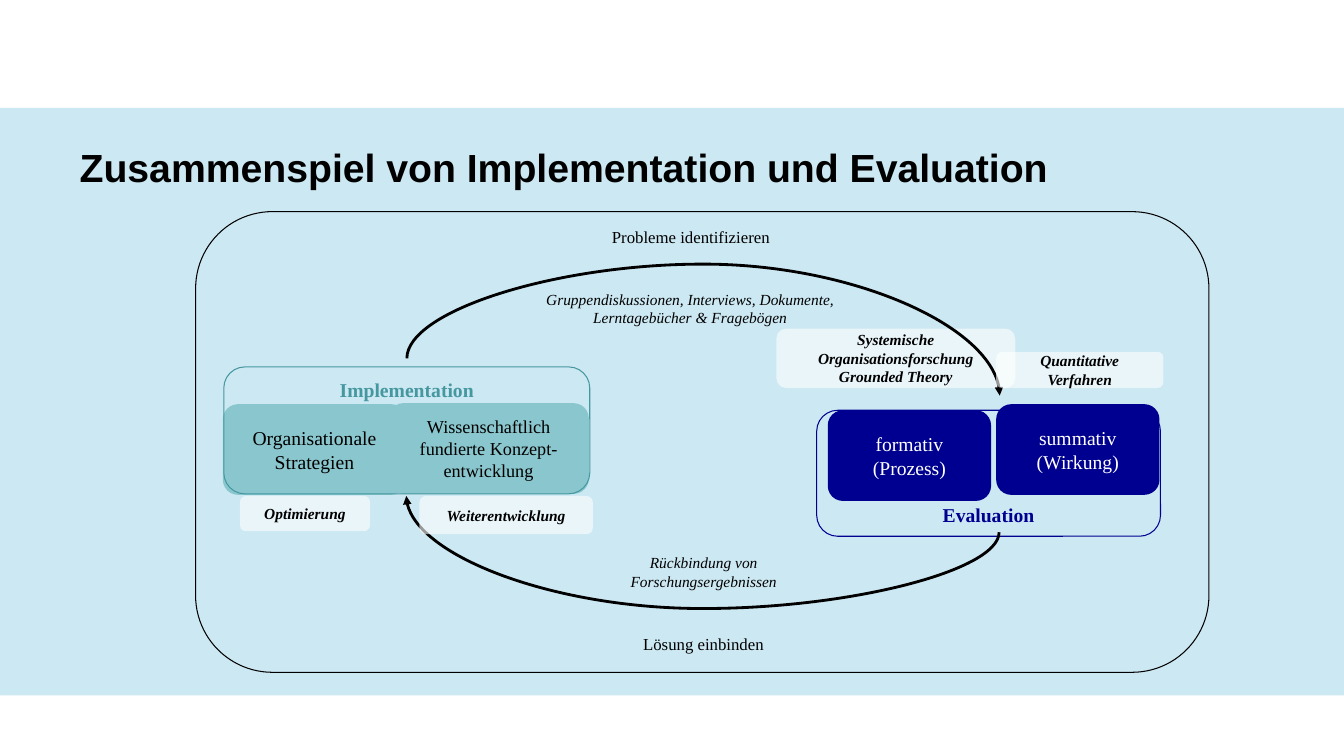
from pptx import Presentation
from pptx.dml.color import RGBColor
from pptx.enum.shapes import MSO_CONNECTOR, MSO_SHAPE
from pptx.enum.text import MSO_ANCHOR, PP_ALIGN
from pptx.oxml.ns import qn
from pptx.util import Pt
from lxml import etree

PX = 9144  # 100 px to the inch
RECT, ROUND = MSO_SHAPE.RECTANGLE, MSO_SHAPE.ROUNDED_RECTANGLE
CURVE = MSO_CONNECTOR.CURVE
TOP, MIDDLE, BOTTOM = MSO_ANCHOR.TOP, MSO_ANCHOR.MIDDLE, MSO_ANCHOR.BOTTOM
LEFT, CENTER = PP_ALIGN.LEFT, PP_ALIGN.CENTER
COLORS = {"black": "000000", "white": "FFFFFF", "band": "008FBE",
          "teal": "8AC6CD", "dark": "4597A0", "navy": "000090"}

deck = Presentation()
deck.slide_width, deck.slide_height = 1333 * PX, 750 * PX
slide = deck.slides.add_slide(deck.slide_layouts[6])
shapes = slide.shapes


def write(shape, text, size=11, color="black", font="Times New Roman", bold=False,
          italic=False, align=CENTER, anchor=MIDDLE, spacing=None, wrap=True):
    frame = shape.text_frame
    frame.word_wrap = wrap
    frame.vertical_anchor = anchor
    frame.text = text
    for para in frame.paragraphs:
        para.alignment = align
        para.line_spacing = spacing
        para.font.size = Pt(size)
        para.font.name = font
        para.font.bold = bold
        para.font.italic = italic
        para.font.color.rgb = RGBColor.from_string(COLORS[color])


def box(area, kind=ROUND, fill=None, line=None, alpha=None):
    """Add a shape; alpha is the opacity of its fill in percent."""
    shape = shapes.add_shape(kind, *[n * PX for n in area])
    shape.shadow.inherit = False
    if fill:
        shape.fill.solid()
        shape.fill.fore_color.rgb = RGBColor.from_string(COLORS[fill])
    else:
        shape.fill.background()
    if alpha:
        tint = shape._element.spPr.find(".//" + qn("a:srgbClr"))
        etree.SubElement(tint, qn("a:alpha"), val=str(alpha * 1000))
    if line:
        shape.line.color.rgb = RGBColor.from_string(COLORS[line])
        shape.line.width = Pt(0.75)
    else:
        shape.line.fill.background()
    return shape


box((0, 107, 1333, 583), RECT, fill="band", alpha=20)
title = shapes.add_textbox(79 * PX, 138 * PX, 1197 * PX, 79 * PX)
frame = title.text_frame
frame.margin_left = frame.margin_right = frame.margin_top = frame.margin_bottom = 0
write(title, "Zusammenspiel von Implementation und Evaluation", size=28,
      font="Arial", bold=True, align=LEFT, anchor=TOP, spacing=1.1)

# Evaluation side and the strategy boxes
pale = {"fill": "white", "alpha": 60}
label = {"bold": True, "italic": True}
write(box((770, 326, 237, 59), **pale),
      "Systemische Organisationsforschung\nGrounded Theory", **label)
write(box((810, 407, 341, 125), line="navy"), "Evaluation", size=14,
      color="navy", bold=True, anchor=BOTTOM, spacing=0.5)
steps = [
    ((385, 400, 199, 90), "teal", "Wissenschaftlich fundierte Konzept-entwicklung", 13, "black"),
    ((221, 401, 182, 90), "teal", "Organisationale Strategien", 14, "black"),
    ((821, 407, 162, 90), "navy", "formativ\n(Prozess)", 14, "white"),
    ((988, 401, 162, 90), "navy", "summativ\n(Wirkung)", 14, "white"),
]
for area, fill, text, size, color in steps:
    write(box(area, fill=fill), text, size=size, color=color)

# Outer frame and the two arcs of the cycle
box((194, 210, 1005, 457), line="black")
for top, wide, turn, bend in [(216, 36, 90, -210500), (80, 37, 270, -252600)]:
    arc = shapes.add_connector(CURVE, 679 * PX, top * PX,
                               (679 + wide) * PX, (top + 588) * PX)
    arc.line.color.rgb = RGBColor.from_string(COLORS["black"])
    arc.line.width = Pt(2)
    props = arc._element.spPr
    xfrm = props.find(qn("a:xfrm"))
    xfrm.set("rot", str(turn * 60000))
    xfrm.set("flipH", "1")
    guides = props.find(qn("a:prstGeom")).find(qn("a:avLst"))
    etree.SubElement(guides, qn("a:gd"), name="adj1", fmla=f"val {bend}")
    etree.SubElement(props.find(qn("a:ln")), qn("a:tailEnd"), type="triangle")
    etree.SubElement(props, qn("a:effectLst"))

# Labels around the cycle
for area, text in [((416, 492, 172, 38), "Weiterentwicklung"),
                   ((238, 492, 129, 35), "Optimierung"),
                   ((988, 349, 166, 36), "Quantitative Verfahren")]:
    write(box(area, **pale), text, **label)
for area, text in [
        ((585, 534, 226, 67), "Rückbindung von Forschungsergebnissen"),
        ((520, 255, 329, 102),
         "Gruppendiskussionen, Interviews, Dokumente, Lerntagebücher & Fragebögen")]:
    write(box(area), text, italic=True)
write(box((222, 364, 363, 126), line="dark"), "Implementation", size=14,
      color="dark", bold=True, anchor=TOP)
for left, top, width, text in [(597, 220, 191, "Probleme identifizieren"),
                               (628, 624, 149, "Lösung einbinden")]:
    note = shapes.add_textbox(left * PX, top * PX, width * PX, 34 * PX)
    write(note, text, size=12, align=LEFT, anchor=TOP, wrap=False)

deck.save("out.pptx")
